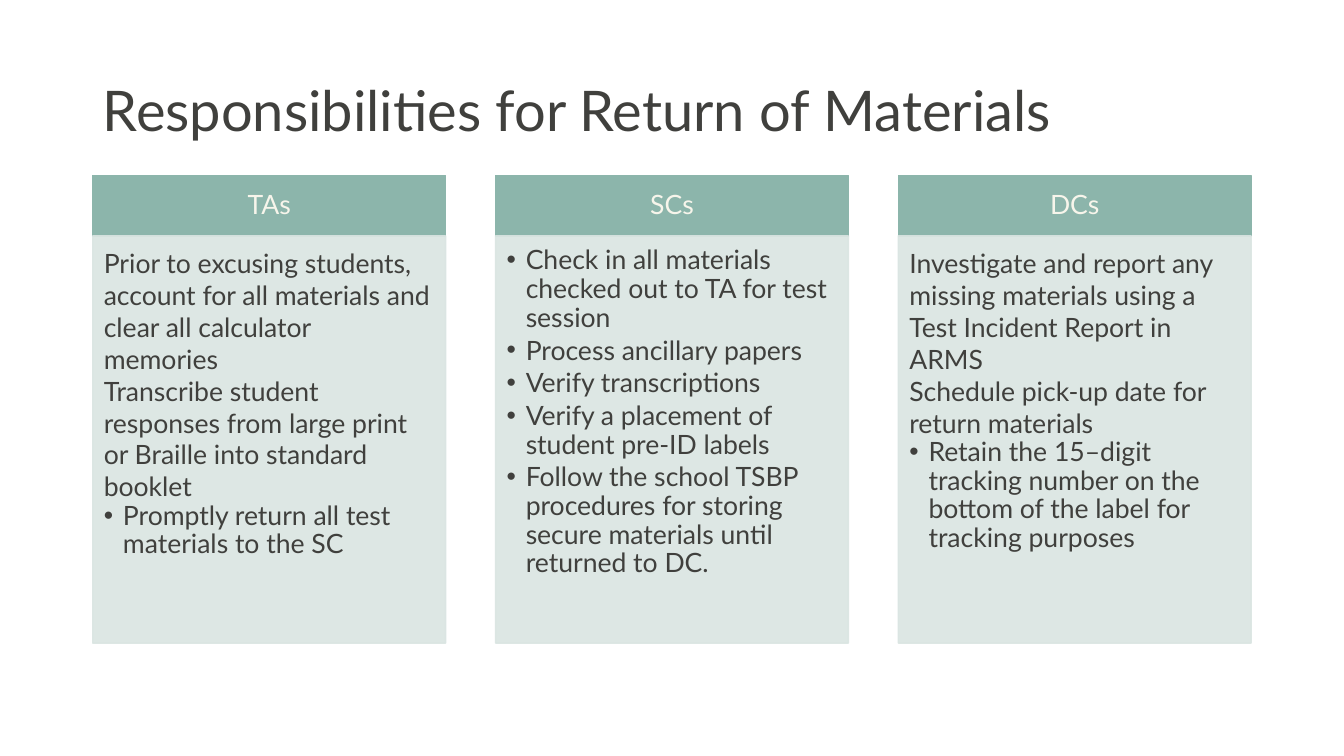
import pptx
import pptx.util
import pptx.dml.color
import pptx.enum.shapes
import pptx.enum.text
import pptx.oxml
import pptx.oxml.ns
from dataclasses import dataclass

Inches, Pt = pptx.util.Inches, pptx.util.Pt
ALIGN, ANCHOR = pptx.enum.text.PP_ALIGN, pptx.enum.text.MSO_ANCHOR


@dataclass(frozen=True)
class Theme:
    font: str = "Lato"
    ink: str = "40403D"
    cream: str = "F7F5EB"
    header: str = "8CB5AB"
    panel: str = "DAE5E2"
    title_size: int = 40
    text_size: int = 19


THEME = Theme()

# Each column: heading, plain paragraphs, bulleted paragraphs
COLUMNS = [
    ("TAs",
     ["Prior to excusing students, account for all materials and clear all calculator memories",
      "Transcribe student responses from large print or Braille into standard booklet"],
     ["Promptly return all test materials to the SC"]),
    ("SCs",
     [],
     ["Check in all materials checked out to TA for test session",
      "Process ancillary papers",
      "Verify transcriptions",
      "Verify a placement of student pre-ID labels",
      "Follow the school TSBP procedures for storing secure materials until returned to DC."]),
    ("DCs",
     ["Investigate and report any missing materials using a Test Incident Report in ARMS",
      "Schedule pick-up date for return materials"],
     ["Retain the 15–digit tracking number on the bottom of the label for tracking purposes"]),
]


def rgb(color):
    return pptx.dml.color.RGBColor.from_string(color)


def set_all(obj, **values):
    for name, value in values.items():
        setattr(obj, name, value)


def set_margins(tf, left, top, right, bottom):
    set_all(tf, margin_left=Inches(left), margin_top=Inches(top),
            margin_right=Inches(right), margin_bottom=Inches(bottom))


def write(p, text, size, color, align=ALIGN.LEFT, spacing=0.9, after=0):
    set_all(p, alignment=align, line_spacing=spacing,
            space_before=Pt(0), space_after=Pt(after))
    r = p.add_run()
    r.text = text
    set_all(r.font, name=THEME.font, size=Pt(size))
    r.font.color.rgb = rgb(color)


def add_bullet(p, indent=0.19):
    pPr = p._p.get_or_add_pPr()
    pPr.set("marL", str(Inches(indent)))
    pPr.set("indent", str(-Inches(indent)))
    ns = pptx.oxml.ns.nsdecls("a")
    pPr.append(pptx.oxml.parse_xml(f'<a:buFont {ns} typeface="Arial"/>'))
    pPr.append(pptx.oxml.parse_xml(f'<a:buChar {ns} char="•"/>'))


def add_block(s, left, top, width, height, color, opacity=100):
    sp = s.shapes.add_shape(pptx.enum.shapes.MSO_SHAPE.RECTANGLE, Inches(left),
                            Inches(top), Inches(width), Inches(height))
    sp.shadow.inherit = False
    sp.line.width = Pt(1)
    for fill in (sp.fill, sp.line.fill):
        fill.solid()
        fill.fore_color.rgb = rgb(color)
    if opacity < 100:
        for clr in sp._element.spPr.iter(pptx.oxml.ns.qn("a:srgbClr")):
            clr.append(pptx.oxml.parse_xml(
                f'<a:alpha {pptx.oxml.ns.nsdecls("a")} val="{opacity * 1000}"/>'))
    sp.text_frame.word_wrap = True
    return sp


def add_title(s, text, left, top, width, height):
    title = s.shapes.title
    set_all(title, left=Inches(left), top=Inches(top),
            width=Inches(width), height=Inches(height))
    tf = title.text_frame
    set_all(tf, vertical_anchor=ANCHOR.MIDDLE, word_wrap=True,
            auto_size=pptx.enum.text.MSO_AUTO_SIZE.NONE)
    write(tf.paragraphs[0], text, THEME.title_size, THEME.ink)


def add_column(s, column, left, top, width, height, header_height=0.6):
    heading, plain, bulleted = column

    # Header band
    tf = add_block(s, left, top, width, header_height, THEME.header).text_frame
    tf.vertical_anchor = ANCHOR.MIDDLE
    set_margins(tf, 0.15, 0.08, 0.15, 0.08)
    write(tf.paragraphs[0], heading, THEME.text_size, THEME.cream, ALIGN.CENTER)

    # Panel with the duties
    tf = add_block(s, left, top + header_height, width, height - header_height,
                   THEME.panel, opacity=90).text_frame
    tf.vertical_anchor = ANCHOR.TOP
    set_margins(tf, 0.11, 0.11, 0.15, 0.17)
    for i, text in enumerate(plain + bulleted):
        p = tf.paragraphs[0] if i == 0 else tf.add_paragraph()
        if i < len(plain):
            write(p, text, THEME.text_size, THEME.ink, spacing=1.0)
        else:
            add_bullet(p)
            write(p, text, THEME.text_size, THEME.ink, after=2.8)


def add_columns(s, columns, left, top, width, height, column_width=3.5):
    step = (width - column_width) / (len(columns) - 1)
    for i, column in enumerate(columns):
        add_column(s, column, left + i * step, top, column_width, height)


def main():
    prs = pptx.Presentation()
    set_all(prs, slide_width=Inches(13.33), slide_height=Inches(7.5))
    s = prs.slides.add_slide(prs.slide_layouts.get_by_name("Title Only"))
    add_title(s, "Responsibilities for Return of Materials", 0.92, 0.4, 11.5, 1.45)
    add_columns(s, COLUMNS, 0.92, 1.74, 11.49, 4.64)
    prs.save("out.pptx")


if __name__ == "__main__":
    main()
